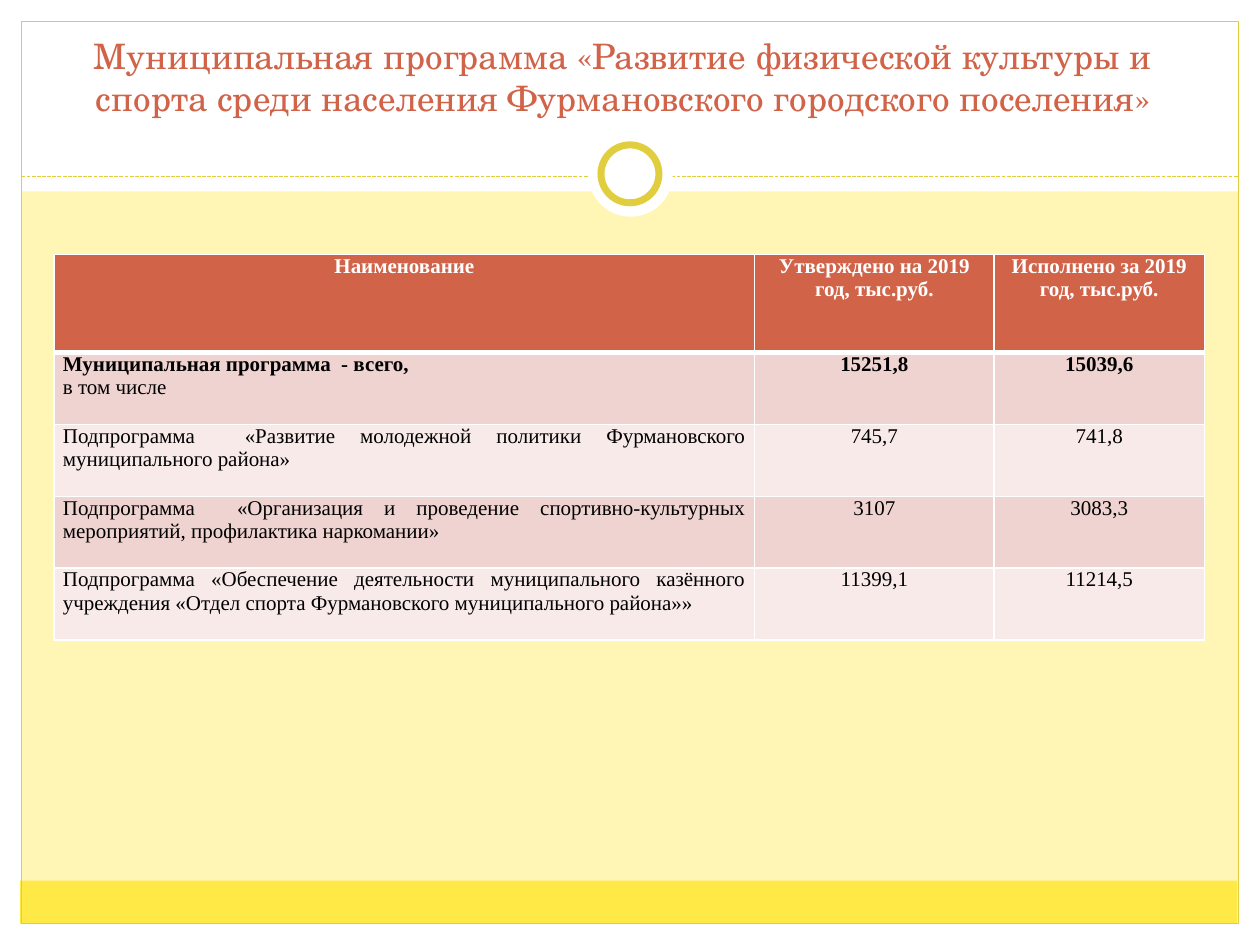
import pptx
import pptx.dml.color
import pptx.enum.dml
import pptx.enum.shapes
import pptx.enum.text
import pptx.oxml.ns
import pptx.util
from lxml import etree
from pptx.dml.color import RGBColor
from pptx.util import Inches

WHITE = RGBColor(0xFF, 0xFF, 0xFF)
BLACK = RGBColor(0, 0, 0)
PALE_YELLOW = RGBColor(0xFF, 0xF6, 0xB5)
YELLOW = RGBColor(0xFF, 0xE9, 0x47)
GOLD = RGBColor(0xE1, 0xCE, 0x3F)
TERRACOTTA = RGBColor(0xD1, 0x63, 0x49)
PINK = RGBColor(0xEE, 0xD3, 0xD0)
PALE_PINK = RGBColor(0xF7, 0xEA, 0xE9)

ALIGN = pptx.enum.text.PP_ALIGN
SHAPE = pptx.enum.shapes.MSO_SHAPE
qn = pptx.oxml.ns.qn


def write_paragraph(paragraph, text, size=12, font="Times New Roman",
                    color=BLACK, bold=False, align=ALIGN.CENTER):
    paragraph.alignment = align
    run = paragraph.add_run()
    run.text = text
    run.font.size = pptx.util.Pt(size)
    run.font.name = font
    run.font.color.rgb = color
    run.font.bold = bold


def add_decor(kind, box, fill=None, line=None, width=0.75):
    decor = slide.shapes.add_shape(kind, *[Inches(length) for length in box])
    decor.shadow.inherit = False
    if fill is None:
        decor.fill.background()
    else:
        decor.fill.solid()
        decor.fill.fore_color.rgb = fill
    if line is None:
        decor.line.fill.background()
    else:
        decor.line.color.rgb = line
        decor.line.width = pptx.util.Pt(width)


deck = pptx.Presentation()
deck.slide_width, deck.slide_height = Inches(10), Inches(7.5)
slide = deck.slides.add_slide(deck.slide_layouts[6])
slide.background.fill.solid()
slide.background.fill.fore_color.rgb = PALE_YELLOW

# White margins, footer band and frame
for margin in [(0, 7.33, 10, 0.17), (0, 0, 10, 1.52),
               (0, 0, 0.17, 7.5), (9.83, 0, 0.17, 7.5)]:
    add_decor(SHAPE.RECTANGLE, margin, fill=WHITE)
add_decor(SHAPE.RECTANGLE, (0.16, 6.99, 9.66, 0.34), fill=YELLOW)
add_decor(SHAPE.RECTANGLE, (0.17, 0.17, 9.66, 7.16), line=GOLD)

# Dashed divider with a ring in its middle
divider = slide.shapes.add_connector(
    pptx.enum.shapes.MSO_CONNECTOR.STRAIGHT,
    Inches(0.17), Inches(1.4), Inches(9.83), Inches(1.4))
divider.line.color.rgb = GOLD
divider.line.width = pptx.util.Pt(0.75)
divider.line.dash_style = pptx.enum.dml.MSO_LINE.SQUARE_DOT
etree.SubElement(divider.element.spPr, qn("a:effectLst"))
add_decor(SHAPE.OVAL, (4.67, 1.05, 0.67, 0.67), fill=WHITE)
add_decor(SHAPE.OVAL, (4.77, 1.15, 0.46, 0.46), fill=WHITE, line=GOLD, width=4)

title = slide.shapes.add_textbox(
    Inches(0.28), Inches(0.29), Inches(9.33), Inches(0.7)).text_frame
title.word_wrap = True
title.vertical_anchor = pptx.enum.text.MSO_ANCHOR.BOTTOM
write_paragraph(
    title.paragraphs[0],
    "Муниципальная программа «Развитие физической культуры и спорта "
    "среди населения Фурмановского городского поселения»",
    size=20, font="TeX Gyre Schola", color=TERRACOTTA)

# Budget table: name, approved, spent
budget = [
    ("Наименование", "Утверждено на 2019 год, тыс.руб.",
     "Исполнено за 2019 год, тыс.руб."),
    ("Муниципальная программа  - всего,\nв том числе", "15251,8", "15039,6"),
    ("Подпрограмма  «Развитие молодежной политики Фурмановского "
     "муниципального района»", "745,7", "741,8"),
    ("Подпрограмма  «Организация и проведение спортивно-культурных "
     "мероприятий, профилактика наркомании»", "3107", "3083,3"),
    ("Подпрограмма «Обеспечение деятельности муниципального казённого "
     "учреждения «Отдел спорта Фурмановского муниципального района»»",
     "11399,1", "11214,5"),
]
table = slide.shapes.add_table(
    len(budget), 3, Inches(0.43), Inches(2.02), Inches(9.13), Inches(3.07)).table
for column, width in zip(table.columns, (5.56, 1.9, 1.67)):
    column.width = Inches(width)

for r, entries in enumerate(budget):
    is_header = r == 0
    table.rows[r].height = Inches(0.78 if is_header else 0.57)
    for c, entry in enumerate(entries):
        cell = table.cell(r, c)
        cell.margin_left = cell.margin_right = Inches(0.07)
        cell.margin_top = cell.margin_bottom = 0

        border_widths = {"a:lnL": 1, "a:lnR": 1, "a:lnT": 3 if r == 1 else 1,
                         "a:lnB": 3 if is_header else 1}
        for side, points in border_widths.items():
            border = etree.SubElement(cell._tc.get_or_add_tcPr(), qn(side),
                                      w=str(pptx.util.Pt(points)))
            border_fill = etree.SubElement(border, qn("a:solidFill"))
            etree.SubElement(border_fill, qn("a:srgbClr"), val=str(WHITE))
        cell.fill.solid()
        cell.fill.fore_color.rgb = (
            TERRACOTTA if is_header else PINK if r % 2 else PALE_PINK)

        for i, line in enumerate(entry.split("\n")):
            frame = cell.text_frame
            write_paragraph(
                frame.add_paragraph() if i else frame.paragraphs[0], line,
                color=WHITE if is_header else BLACK,
                bold=r <= 1 and i == 0,
                align=ALIGN.JUSTIFY if c == 0 and not is_header else ALIGN.CENTER)

deck.save("out.pptx")
